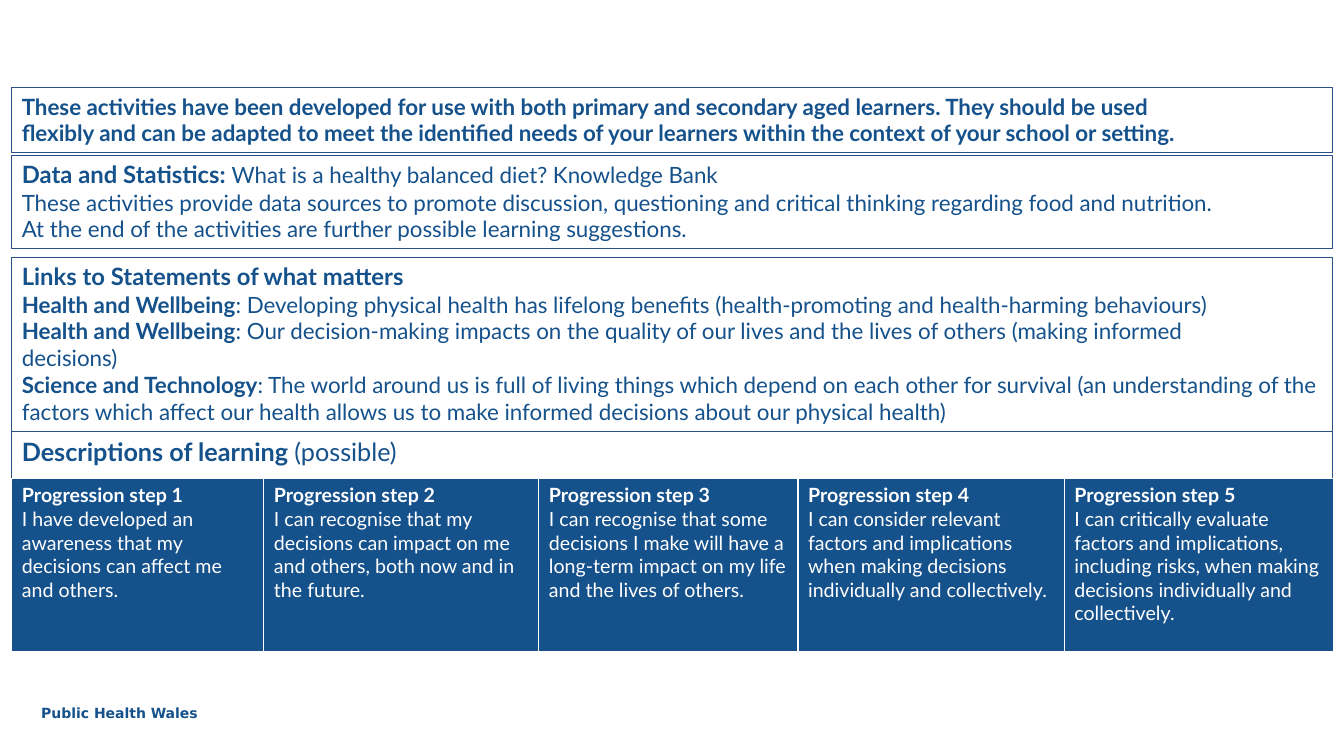
import pptx
import pptx.dml.color
import pptx.enum.shapes
import pptx.enum.text
import pptx.oxml
import pptx.oxml.ns
import pptx.util
from pptx.util import Cm

COLORS = {"text": "15518B", "border": "285087", "white": "FFFFFF"}
LEFT, WIDTH = 0.3, 33.27
TABLE_TOP, ROW_HEIGHT = 12.06, 4.39
COLUMN_WIDTHS = [6.35, 6.93, 6.53, 6.71, 6.78]
BORDER_WIDTHS = {"a:lnL": 1, "a:lnR": 1, "a:lnT": 1, "a:lnB": 3}

# Each box: top, height, then paragraphs of (text, size, bold) runs.
BOXES = [
    (2.21, 1.63, [
        [("These activities have been developed for use with both primary and secondary aged learners. They should be used", 16, True)],
        [("flexibly and can be adapted to meet the identified needs of your learners within the context of your school or setting.", 16, True)],
    ]),
    (3.91, 2.36, [
        [("Data and Statistics: ", 17, True), ("What is a healthy balanced diet? Knowledge Bank", 16, False)],
        [("These activities provide data sources to promote discussion, questioning and critical thinking regarding food and nutrition.", 16, False)],
        [("At the end of the activities are further possible learning suggestions.", 16, False)],
    ]),
    (6.48, 4.39, [
        [("Links to Statements of what matters", 17, True)],
        [("Health and Wellbeing", 16, True),
         (": Developing physical health has lifelong benefits (health-promoting and health-harming behaviours)", 16, False)],
        [("Health and Wellbeing", 16, True),
         (": Our decision-making impacts on the quality of our lives and the lives of others (making informed", 16, False)],
        [("decisions)", 16, False)],
        [("Science and Technology", 16, True),
         (": The world around us is full of living things which depend on each other for survival (an understanding of the "
          "factors which affect our health allows us to make informed decisions about our physical health)", 16, False)],
    ]),
    (10.87, 4.45, [
        [("Descriptions of learning ", 18, True), ("(possible)", 18, False)],
    ]),
]

PROGRESSION_STEPS = [
    "I have developed an awareness that my decisions can affect me and others.",
    "I can recognise that my decisions can impact on me and others, both now and in the future.",
    "I can recognise that some decisions I make will have a long-term impact on my life and the lives of others.",
    "I can consider relevant factors and implications when making decisions individually and collectively.",
    "I can critically evaluate factors and implications, including risks, when making decisions individually and collectively.",
]


def rgb(name):
    return pptx.dml.color.RGBColor.from_string(COLORS[name])


def set_font(font, size, bold, color="text", name="Lato"):
    font.name = name
    font.size = pptx.util.Pt(size)
    font.bold = bold
    font.color.rgb = rgb(color)


def write_paragraphs(text_frame, paragraphs, color="text", name="Lato"):
    for index, runs in enumerate(paragraphs):
        paragraph = text_frame.add_paragraph() if index else text_frame.paragraphs[0]
        paragraph.alignment = pptx.enum.text.PP_ALIGN.LEFT
        for text, size, bold in runs:
            run = paragraph.add_run()
            run.text = text
            if len(runs) > 1:
                set_font(run.font, size, bold, color, name)
        if len(runs) == 1:
            set_font(paragraph.font, size, bold, color, name)


def add_box(slide, top, height, paragraphs):
    shape = slide.shapes.add_shape(
        pptx.enum.shapes.MSO_SHAPE.RECTANGLE, Cm(LEFT), Cm(top), Cm(WIDTH), Cm(height))
    shape.shadow.inherit = False
    shape.fill.background()
    shape.line.color.rgb = rgb("border")
    shape.line.width = pptx.util.Pt(0.75)
    shape.text_frame.word_wrap = True
    shape.text_frame.vertical_anchor = pptx.enum.text.MSO_ANCHOR.TOP
    write_paragraphs(shape.text_frame, paragraphs)


def set_cell_borders(cell):
    properties = cell._tc.get_or_add_tcPr()
    for position, (tag, width) in enumerate(BORDER_WIDTHS.items()):
        line = pptx.oxml.parse_xml(
            f'<{tag} {pptx.oxml.ns.nsdecls("a")} w="{pptx.util.Pt(width)}"><a:solidFill>'
            f'<a:srgbClr val="{COLORS["white"]}"/></a:solidFill></{tag}>')
        properties.insert(position, line)


def add_progression_table(slide):
    table = slide.shapes.add_table(
        1, len(PROGRESSION_STEPS), Cm(LEFT), Cm(TABLE_TOP),
        Cm(sum(COLUMN_WIDTHS)), Cm(ROW_HEIGHT)).table
    for index, (width, description) in enumerate(zip(COLUMN_WIDTHS, PROGRESSION_STEPS)):
        table.columns[index].width = Cm(width)
        cell = table.cell(0, index)
        cell.fill.solid()
        cell.fill.fore_color.rgb = rgb("text")
        set_cell_borders(cell)
        write_paragraphs(cell.text_frame, [
            [(f"Progression step {index + 1}", 14, True)],
            [(description, 14, False)],
        ], "white")


def add_footer(slide):
    text_box = slide.shapes.add_textbox(Cm(0.79), Cm(17.63), Cm(4.6), Cm(0.69))
    text_box.text_frame.word_wrap = True
    write_paragraphs(text_box.text_frame, [[("Public Health Wales", 10, True)]], name="DejaVu Sans")


def main():
    presentation = pptx.Presentation()
    presentation.slide_width = Cm(33.87)
    presentation.slide_height = Cm(19.05)
    slide = presentation.slides.add_slide(presentation.slide_layouts[6])
    add_footer(slide)
    for top, height, paragraphs in BOXES:
        add_box(slide, top, height, paragraphs)
    add_progression_table(slide)
    presentation.save("out.pptx")


if __name__ == "__main__":
    main()
